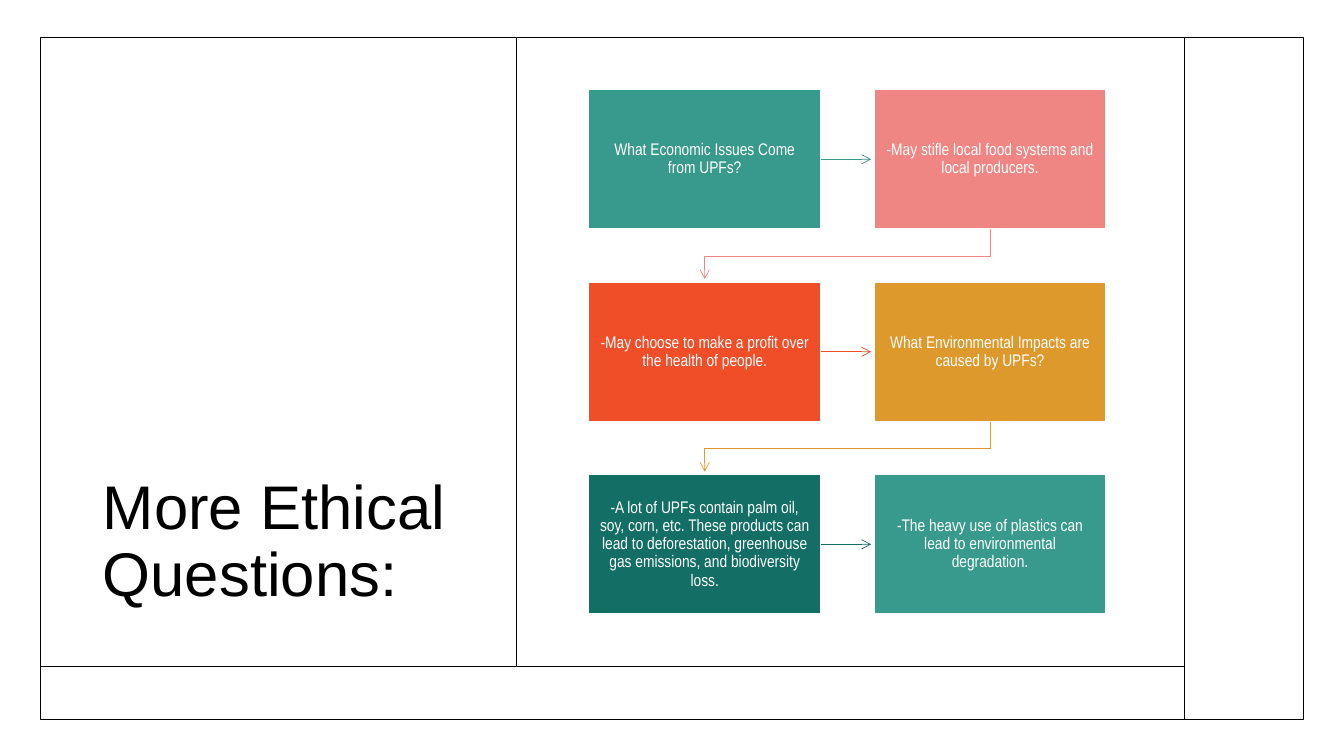
from lxml.etree import SubElement
from pptx import Presentation
from pptx.dml.color import RGBColor
from pptx.enum.shapes import MSO_CONNECTOR, MSO_SHAPE
from pptx.enum.text import MSO_ANCHOR, MSO_AUTO_SIZE, PP_ALIGN
from pptx.oxml.ns import qn
from pptx.util import Pt

PX = 9144  # EMU in one px, 100 px to the inch

BOX_WIDTH, BOX_HEIGHT = 230, 138
LEFT, TOP = 584, 89
COLUMN_STEP, ROW_STEP = 283, 191
ARROW_GAP = 3

STEPS = [
    ("What Economic Issues Come from UPFs?", "38998D"),
    ("-May stifle local food systems and local producers.", "EF8683"),
    ("-May choose to make a profit over the health of people.", "F04E28"),
    ("What Environmental Impacts are caused by UPFs?", "DD992C"),
    ("-A lot of UPFs contain palm oil, soy, corn, etc. These products can lead "
     "to deforestation, greenhouse gas emissions, and biodiversity loss.", "136E65"),
    ("-The heavy use of plastics can lead to environmental degradation.", "38998D"),
]

FRAME_LINES = [
    (41, 661, 1175, 661),
    (512, 37, 512, 661),
    (1175, 37, 1175, 713),
]


def color(value):
    return RGBColor.from_string(value)


def set_values(target, values):
    for name, value in values.items():
        setattr(target, name, value)


def set_line(shape, value, width):
    shape.line.color.rgb = color(value)
    shape.line.width = Pt(width)


def set_text(shape, text, font, size, value, anchor, align, margins):
    frame = shape.text_frame
    frame.text = text
    set_values(frame, {"word_wrap": True, "auto_size": MSO_AUTO_SIZE.NONE,
                       "vertical_anchor": anchor})
    for side, margin in zip(("left", "top", "right", "bottom"), margins):
        setattr(frame, f"margin_{side}", margin * PX)
    paragraph = frame.paragraphs[0]
    set_values(paragraph, {"alignment": align, "line_spacing": 0.9})
    set_values(paragraph.font, {"name": font, "size": Pt(size)})
    paragraph.font.color.rgb = color(value)


def add_box(slide, left, top, width, height, fill, line):
    box = slide.shapes.add_shape(
        MSO_SHAPE.RECTANGLE, left * PX, top * PX, width * PX, height * PX)
    box.shadow.inherit = False
    if fill:
        box.fill.solid()
        box.fill.fore_color.rgb = color(fill)
    else:
        box.fill.background()
    set_line(box, line, 1)
    return box


def add_line(slide, points, value, width):
    connector = slide.shapes.add_connector(
        MSO_CONNECTOR.STRAIGHT, *[point * PX for point in points])
    set_line(connector, value, width)
    SubElement(connector._element.spPr, qn("a:effectLst"))
    return connector


def add_bent_line(slide, points, value, width):
    builder = slide.shapes.build_freeform(*points[0], scale=PX)
    builder.add_line_segments(points[1:], close=False)
    shape = builder.convert_to_shape()
    shape.shadow.inherit = False
    shape.fill.background()
    set_line(shape, value, width)
    return shape


def add_arrowhead(shape):
    SubElement(shape.line._get_or_add_ln(), qn("a:tailEnd"), type="arrow")


def add_step(slide, index, text, fill):
    row, column = divmod(index, 2)
    left, top = LEFT + column * COLUMN_STEP, TOP + row * ROW_STEP
    # Arrow to the next step: right within a row, down and back between rows
    if index < len(STEPS) - 1:
        if column == 0:
            middle = top + BOX_HEIGHT // 2
            arrow = add_line(slide, (left + BOX_WIDTH, middle,
                                     left + COLUMN_STEP - ARROW_GAP, middle), fill, 0.5)
        else:
            start, end = left + BOX_WIDTH // 2, LEFT + BOX_WIDTH // 2
            bottom, next_top = top + BOX_HEIGHT, top + ROW_STEP
            bend = (bottom + next_top + 1) // 2
            arrow = add_bent_line(slide, [(start, bottom), (start, bend), (end, bend),
                                          (end, next_top - ARROW_GAP)], fill, 0.5)
        add_arrowhead(arrow)
    box = add_box(slide, left, top, BOX_WIDTH, BOX_HEIGHT, fill, "FFFFFF")
    set_text(box, text, "Arial Narrow", 12, "FFFFFF",
             MSO_ANCHOR.MIDDLE, PP_ALIGN.CENTER, (11, 12, 11, 12))


def main():
    presentation = Presentation()
    set_values(presentation, {"slide_width": 1333 * PX, "slide_height": 750 * PX})
    slide = presentation.slides.add_slide(presentation.slide_layouts[5])

    # Title
    title = slide.shapes.title
    set_values(title, {"left": 92 * PX, "top": 89 * PX,
                       "width": 375 * PX, "height": 521 * PX})
    set_text(title, "More Ethical Questions:", "Arial", 44, "000000",
             MSO_ANCHOR.BOTTOM, PP_ALIGN.LEFT, (10, 5, 10, 5))

    # Frame and its dividing lines
    add_box(slide, 40, 37, 1253, 677, None, "000000")
    for points in FRAME_LINES:
        add_line(slide, points, "000000", 1)

    # Flow of questions and answers
    for index, (text, fill) in enumerate(STEPS):
        add_step(slide, index, text, fill)

    presentation.save("out.pptx")


if __name__ == "__main__":
    main()
